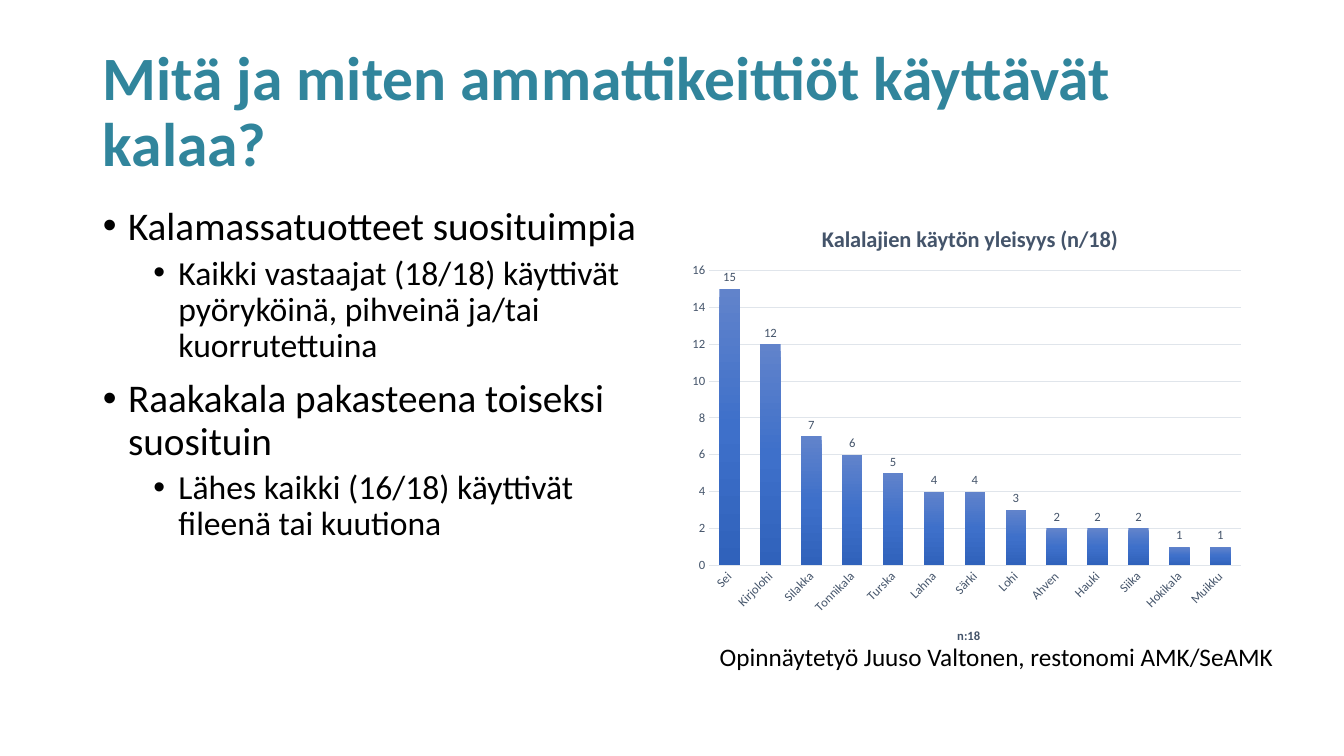
from copy import deepcopy

from lxml.etree import SubElement
from pptx import Presentation
from pptx.chart.data import CategoryChartData
from pptx.dml.color import RGBColor
from pptx.enum.chart import XL_CHART_TYPE, XL_LABEL_POSITION, XL_TICK_MARK
from pptx.enum.text import MSO_ANCHOR, MSO_AUTO_SIZE, PP_ALIGN
from pptx.oxml import parse_xml
from pptx.oxml.ns import nsdecls, qn
from pptx.util import Inches, Pt

FONT = "Calibri"
TEAL = RGBColor(0x31, 0x85, 0x9C)
BLACK = RGBColor(0, 0, 0)
SLATE = RGBColor(0x44, 0x54, 0x6A)
GRID = RGBColor(0xE0, 0xE5, 0xEB)
SHADES = [
    (0, RGBColor(0x61, 0x83, 0xCB)),
    (0.5, RGBColor(0x3E, 0x70, 0xCA)),
    (1, RGBColor(0x30, 0x62, 0xBB)),
]
POINTS = [
    (0, "Kalamassatuotteet suosituimpia"),
    (1, "Kaikki vastaajat (18/18) käyttivät pyöryköinä, pihveinä ja/tai kuorrutettuina"),
    (0, "Raakakala pakasteena toiseksi suosituin"),
    (1, "Lähes kaikki (16/18) käyttivät fileenä tai kuutiona"),
]
FISH = {
    "Sei": 15, "Kirjolohi": 12, "Silakka": 7, "Tonnikala": 6, "Turska": 5,
    "Lahna": 4, "Särki": 4, "Lohi": 3, "Ahven": 2, "Hauki": 2, "Siika": 2,
    "Hokikala": 1, "Muikku": 1,
}


def style(font, size, color=BLACK, bold=False):
    """Set the face, size, colour and weight of a font."""
    font.name, font.size, font.bold = FONT, Pt(size), bold
    font.color.rgb = color


def write(para, text, size, color=BLACK, bold=False, lines=None, before=0):
    """Put formatted text in a paragraph."""
    run = para.add_run()
    run.text = text
    style(run.font, size, color, bold)
    para.space_before = Pt(before)
    if lines:
        para.line_spacing = lines


def move(shape, left, top, width, height):
    """Place a shape, with lengths in inches."""
    shape.left, shape.top = Inches(left), Inches(top)
    shape.width, shape.height = Inches(width), Inches(height)


def bullet(para, left):
    """Give a paragraph a hanging round bullet."""
    props = para._p.get_or_add_pPr()
    props.set("marL", str(Inches(left)))
    props.set("indent", str(Inches(-0.25)))
    SubElement(props, qn("a:buFont"), typeface="Arial")
    SubElement(props, qn("a:buChar"), char="•")


def add_title(slide):
    """Fill the title placeholder."""
    title = slide.shapes.title
    move(title, 0.92, 0.4, 11.5, 1.45)
    frame = title.text_frame
    frame.auto_size = MSO_AUTO_SIZE.NONE
    frame.vertical_anchor = MSO_ANCHOR.MIDDLE
    para = frame.paragraphs[0]
    para.alignment = PP_ALIGN.LEFT
    write(para, "Mitä ja miten ammattikeittiöt käyttävät kalaa?", 44, TEAL, True, lines=0.9)


def add_list(slide):
    """Fill the body placeholder with the two-level list."""
    body = slide.placeholders[1]
    move(body, 0.92, 2, 5.67, 4.57)
    frame = body.text_frame
    frame.auto_size = MSO_AUTO_SIZE.NONE
    for i, (level, text) in enumerate(POINTS):
        para = frame.add_paragraph() if i else frame.paragraphs[0]
        para.level = level
        bullet(para, 0.25 + 0.5 * level)
        before = (5 if level else 10) if i else 0
        write(para, text, 24 if level else 28, lines=0.9, before=before)


def place(node, index, **spots):
    """Fix the place of a chart part as shares of the chart."""
    for old in node.findall(qn("c:layout")):
        node.remove(old)
    target = '<c:layoutTarget val="inner"/>' if "w" in spots else ""
    modes = "".join(f'<c:{key}Mode val="edge"/>' for key in ("x", "y"))
    vals = "".join(f'<c:{key} val="{val}"/>' for key, val in spots.items())
    node.insert(index, parse_xml(
        f'<c:layout {nsdecls("c")}><c:manualLayout>{target}{modes}{vals}'
        "</c:manualLayout></c:layout>"))


def label(title, text, size, x, y):
    """Write and place a chart or axis title."""
    write(title.text_frame.paragraphs[0], text, size, SLATE, True)
    place(title._element, 1, x=x, y=y)


def shade(series):
    """Fill the columns with a vertical gradient."""
    fill = series.format.fill
    fill.gradient()
    stops = series._element.find(".//" + qn("a:gsLst"))
    stops.append(deepcopy(stops[0]))
    for stop, (spot, color) in zip(fill.gradient_stops, SHADES):
        stop.position, stop.color.rgb = spot, color
    fill.gradient_angle = 270


def trim(chart):
    """Format both axes and the gridlines."""
    cats, vals = chart.category_axis, chart.value_axis
    for axis in (cats, vals):
        axis.major_tick_mark = axis.minor_tick_mark = XL_TICK_MARK.NONE
        style(axis.tick_labels.font, 9, SLATE)
    vals.minimum_scale, vals.maximum_scale, vals.major_unit = 0, 16, 2
    vals.format.line.fill.background()
    for line in (cats.format.line, vals.major_gridlines.format.line):
        line.color.rgb, line.width = GRID, Pt(0.75)
    turn = cats._element.find(qn("c:txPr")).find(qn("a:bodyPr"))
    turn.set("rot", "-2700000")
    turn.set("vert", "horz")
    label(cats.axis_title, "n:18", 9, 0.48, 0.92)


def add_columns(slide):
    """Add the column chart of fish species."""
    data = CategoryChartData()
    data.categories = list(FISH)
    data.add_series("Series 1", list(FISH.values()))
    chart = slide.shapes.add_chart(
        XL_CHART_TYPE.COLUMN_CLUSTERED, Inches(6.75), Inches(2),
        Inches(5.67), Inches(4.57), data).chart
    style(chart.font, 10)
    chart.has_legend = False
    chart.has_title = True
    label(chart.chart_title, "Kalalajien käytön yleisyys (n/18)", 16, 0.24, 0.04)
    trim(chart)
    plot = chart.plots[0]
    plot.vary_by_categories = False
    plot.gap_width, plot.overlap = 100, -24
    shade(plot.series[0])
    plot.has_data_labels = True
    tags = plot.data_labels
    tags.show_value = True
    tags.position = XL_LABEL_POSITION.OUTSIDE_END
    style(tags.font, 9, SLATE)
    area = chart._chartSpace.find(".//" + qn("c:plotArea"))
    place(area, 0, x=0.05, y=0.15, w=0.93, h=0.64)


def add_credit(slide):
    """Add the source line under the chart."""
    box = slide.shapes.add_textbox(Inches(7.04), Inches(6.31), Inches(6.67), Inches(0.4))
    box.text_frame.word_wrap = True
    write(box.text_frame.paragraphs[0],
          "Opinnäytetyö Juuso Valtonen, restonomi AMK/SeAMK", 18)


def main():
    """Build and save the slide."""
    deck = Presentation()
    deck.slide_width, deck.slide_height = Inches(13.33), Inches(7.5)
    slide = deck.slides.add_slide(deck.slide_layouts[1])
    add_title(slide)
    add_list(slide)
    add_columns(slide)
    add_credit(slide)
    deck.save("out.pptx")


if __name__ == "__main__":
    main()
